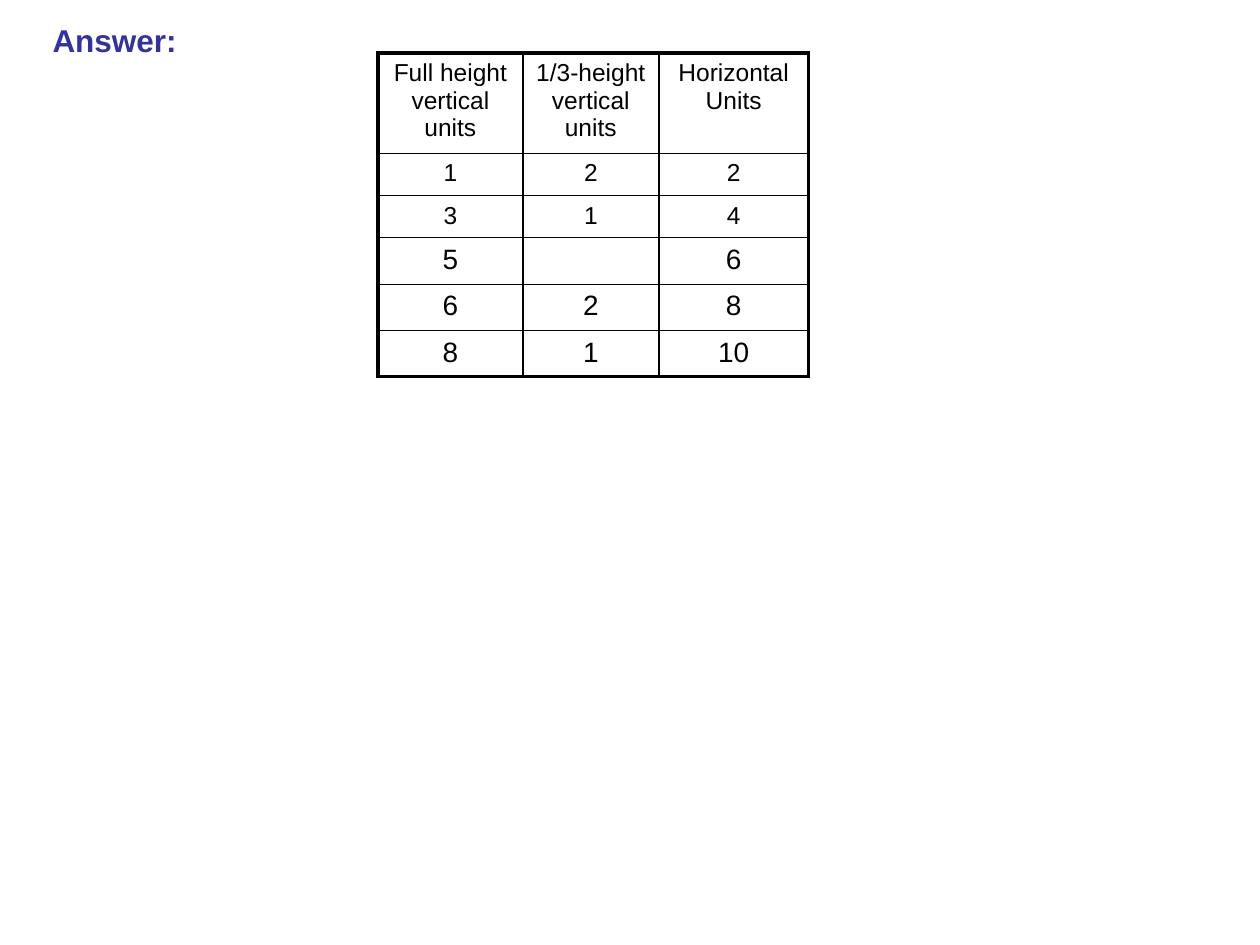
import pptx
import pptx.util
import pptx.dml.color
import pptx.enum.text
import pptx.oxml
import pptx.oxml.ns

Cm = pptx.util.Cm
Pt = pptx.util.Pt
HUES = {"ink": "000000", "title": "333399"}
FONT = "Arial"


def write(frame, text, size=14, hue="ink", bold=False, align="LEFT"):
    para = frame.paragraphs[0]
    para.alignment = getattr(pptx.enum.text.PP_ALIGN, align)
    if not text:
        para._p.get_or_add_endParaRPr().set("sz", str(size * 100))
        return
    run = para.add_run()
    run.text = text
    run.font.name = FONT
    run.font.size = Pt(size)
    run.font.bold = bold
    run.font.color.rgb = pptx.dml.color.RGBColor.from_string(HUES[hue])


class Deck:
    thin = 1
    thick = 2.25

    def __init__(self, wide, high):
        self.show = pptx.Presentation()
        self.show.slide_width = Cm(wide)
        self.show.slide_height = Cm(high)
        self.slide = self.show.slides.add_slide(self.show.slide_layouts[6])

    def label(self, text, left, top, wide, high, **style):
        box = self.slide.shapes.add_textbox(Cm(left), Cm(top), Cm(wide), Cm(high))
        box.text_frame.word_wrap = False
        write(box.text_frame, text, **style)

    def edge(self, cell, sides):
        props = cell._tc.get_or_add_tcPr()
        for spot, (side, outer) in enumerate(sides.items()):
            width = Pt(self.thick if outer else self.thin)
            line = pptx.oxml.parse_xml(
                f'<a:ln{side} {pptx.oxml.ns.nsdecls("a")} w="{width}">'
                f'<a:solidFill><a:srgbClr val="{HUES["ink"]}"/></a:solidFill>'
                f'</a:ln{side}>')
            props.insert(spot, line)

    def grid(self, rows, left, top, wides, highs, sizes):
        frame = self.slide.shapes.add_table(
            len(rows), len(wides), Cm(left), Cm(top), Cm(sum(wides)), Cm(sum(highs)))
        table = frame.table
        table.first_row = table.horz_banding = False
        for col, wide in zip(table.columns, wides):
            col.width = Cm(wide)
        for r, (row, high, size) in enumerate(zip(rows, highs, sizes)):
            table.rows[r].height = Cm(high)
            for c, text in enumerate(row):
                cell = table.cell(r, c)
                cell.fill.background()
                write(cell.text_frame, text, size=size, align="CENTER")
                self.edge(cell, {"L": c == 0, "R": c == len(wides) - 1,
                                 "T": r == 0, "B": r == len(rows) - 1})


def main():
    deck = Deck(25.4, 19.05)
    units = [
        ("Full height vertical units", "1/3-height vertical units", "Horizontal Units"),
        ("1", "2", "2"),
        ("3", "1", "4"),
        ("5", "", "6"),
        ("6", "2", "8"),
        ("8", "1", "10"),
    ]
    deck.grid(units, 7.62, 1.07, wides=[2.92, 2.74, 3.02],
              highs=[2.02] + [0.85] * 2 + [0.93] * 3, sizes=[14] * 3 + [16] * 3)
    deck.label("Answer:", 0.81, 0.3, 3.02, 1.02, size=18, hue="title", bold=True)
    deck.show.save("out.pptx")


if __name__ == "__main__":
    main()
